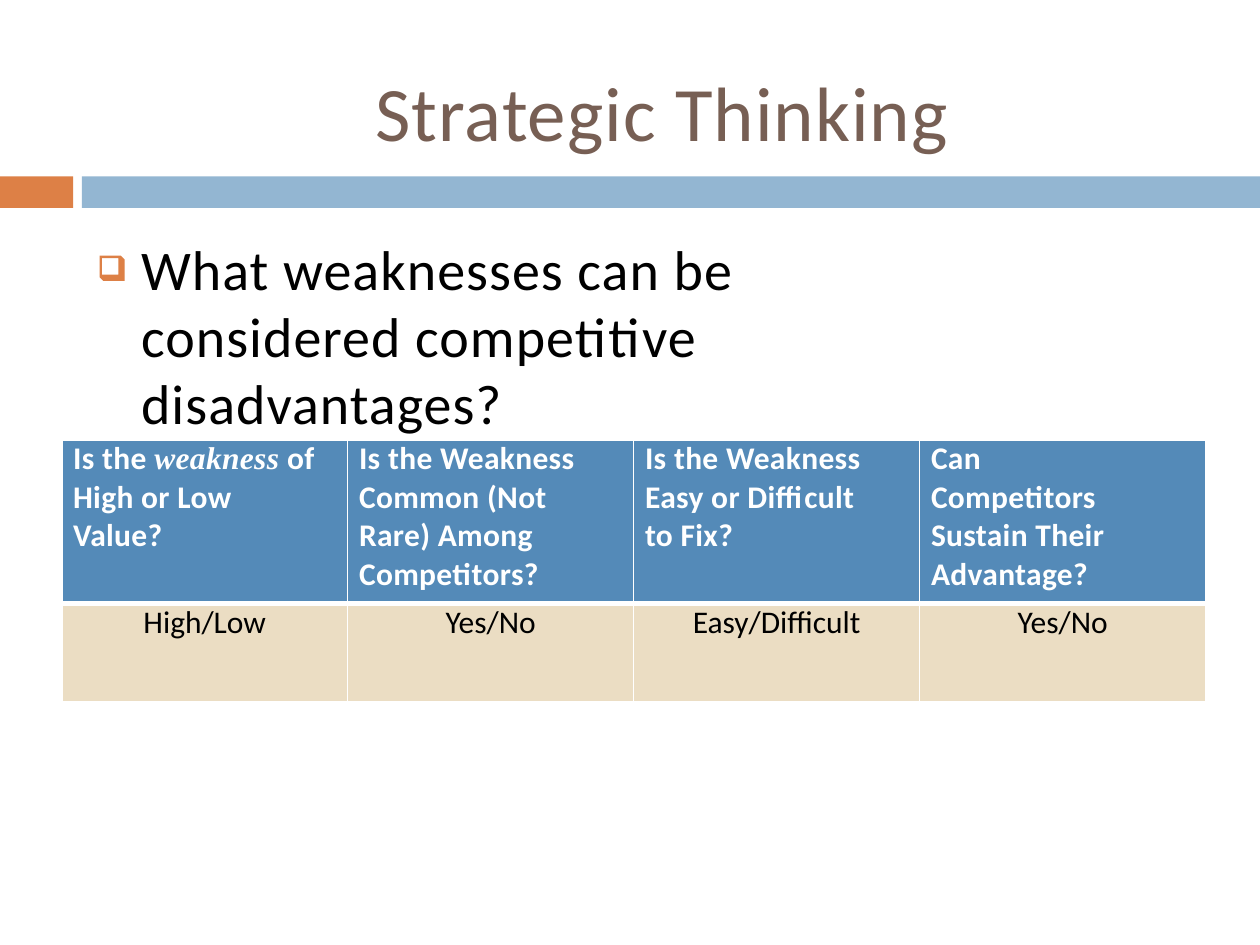
from lxml import etree
from pptx import Presentation
from pptx.dml.color import RGBColor
from pptx.enum.shapes import MSO_SHAPE
from pptx.enum.text import MSO_ANCHOR, MSO_AUTO_SIZE, PP_ALIGN
from pptx.oxml.ns import qn
from pptx.util import Inches, Pt

RECTANGLE = MSO_SHAPE.RECTANGLE
TOP = MSO_ANCHOR.TOP
NO_AUTOFIT = MSO_AUTO_SIZE.NONE
LEFT, CENTER = PP_ALIGN.LEFT, PP_ALIGN.CENTER

COLORS = {
    "orange": "DD8046", "blue": "93B6D2", "header": "548AB8",
    "sand": "EBDDC3", "brown": "775F54", "black": "000000", "white": "FFFFFF",
}
SANS, SERIF = "Calibri", "Times New Roman"

# Each header is a list of paragraphs, each paragraph a list of (text, is_emphasis);
# the last number is the right margin of the cell.
HEADERS = [
    ([[("Is the ", False), ("weakness", True), (" of High or Low Value?", False)]], 0.18),
    ([[("Is the Weakness Common (Not Rare) Among Competitors?", False)]], 0.2),
    ([[("Is the Weakness Easy or Difficult to Fix?", False)]], 0.35),
    ([[("Can Competitors Sustain Their", False)], [("Advantage?", False)]], 0.5),
]
ANSWERS = ["High/Low", "Yes/No", "Easy/Difficult", "Yes/No"]


def color(name):
    return RGBColor.from_string(COLORS[name])


def add_span(para, text, size, color_name, spacing=0, font=SANS, bold=False, italic=False):
    span = para.add_run()
    span.text = text
    span.font.name, span.font.size = font, Pt(size)
    span.font.bold, span.font.italic = bold, italic
    span.font.color.rgb = color(color_name)
    if spacing:
        span._r.get_or_add_rPr().set("spc", str(round(spacing * 100)))


def paint(shape, color_name):
    shape.shadow.inherit = False
    shape.fill.solid()
    shape.fill.fore_color.rgb = color(color_name)
    shape.line.fill.background()


def fill_placeholder(holder, box, text, size, color_name, inset_left=0, inset_top=0):
    holder.left, holder.top, holder.width, holder.height = map(Inches, box)
    frame = holder.text_frame
    frame.word_wrap, frame.auto_size = True, NO_AUTOFIT
    frame.vertical_anchor = TOP
    frame.margin_left, frame.margin_top = Inches(inset_left), Inches(inset_top)
    frame.margin_right = frame.margin_bottom = 0
    para = frame.paragraphs[0]
    para.alignment, para.space_before = LEFT, Pt(0)
    add_span(para, text, size, color_name, spacing=0.6)
    return para


def add_band(page, top, height):
    for left, width, name in ((0, 0.58, "orange"), (0.65, 9.35, "blue")):
        bar = page.shapes.add_shape(
            RECTANGLE, Inches(left), Inches(top), Inches(width), Inches(height))
        paint(bar, name)


def add_question(page, box):
    para = fill_placeholder(page.placeholders[1], box,
                            "What weaknesses can be considered competitive disadvantages?",
                            32, "black", inset_left=0.01)
    properties = para._p.get_or_add_pPr()
    properties.set("marL", "0")
    properties.set("indent", "0")
    etree.SubElement(properties, qn("a:buNone"))


def add_checkbox(page, left, top):
    """Square frame with a thick lower right edge."""
    def points(pairs):
        return [(Inches(left + x), Inches(top + y)) for x, y in pairs]

    # Outer outline with its shaded edge, then the open inside
    outer = points([(0, 0), (0.17, 0), (0.2, 0.03), (0.2, 0.2), (0.03, 0.2), (0, 0.17)])
    inner = points([(0.02, 0.02), (0.02, 0.15), (0.15, 0.15), (0.15, 0.02)])
    builder = page.shapes.build_freeform(*outer[0])
    builder.add_line_segments(outer[1:], close=True)
    builder.move_to(*inner[0])
    builder.add_line_segments(inner[1:], close=True)
    paint(builder.convert_to_shape(), "orange")


def style_cell(cell, fill_name, widths):
    """Give the cell white borders and a fill; widths are in points."""
    properties = cell._tc.get_or_add_tcPr()
    for side, width in zip(("L", "R", "T", "B"), widths):
        line = etree.SubElement(properties, qn(f"a:ln{side}"), w=str(Pt(width)))
        solid = etree.SubElement(line, qn("a:solidFill"))
        etree.SubElement(solid, qn("a:srgbClr"), val=COLORS["white"])
    cell.fill.solid()
    cell.fill.fore_color.rgb = color(fill_name)
    cell.margin_left = cell.margin_right = cell.margin_top = cell.margin_bottom = 0


def add_weakness_table(page, box, row_heights):
    table = page.shapes.add_table(2, len(HEADERS), *map(Inches, box)).table
    for row, height in zip(table.rows, row_heights):
        row.height = Inches(height)
    for index, ((paragraphs, right), answer) in enumerate(zip(HEADERS, ANSWERS)):
        table.columns[index].width = Inches(box[2] / len(HEADERS))

        # Question
        header = table.cell(0, index)
        style_cell(header, "header", (1, 1, 1, 3))
        header.margin_left, header.margin_right = Inches(0.09), Inches(right)
        frame = header.text_frame
        for number, spans in enumerate(paragraphs):
            para = frame.add_paragraph() if number else frame.paragraphs[0]
            for text, emphasis in spans:
                add_span(para, text, 18, "white", spacing=0.2, bold=True,
                         font=SERIF if emphasis else SANS, italic=emphasis)

        # Possible answers
        cell = table.cell(1, index)
        style_cell(cell, "sand", (1, 1, 3, 1))
        para = cell.text_frame.paragraphs[0]
        para.alignment = CENTER
        add_span(para, answer, 18, "black")


def main():
    deck = Presentation()
    deck.slide_width, deck.slide_height = Inches(10), Inches(7.5)
    page = deck.slides.add_slide(deck.slide_layouts[1])
    add_band(page, 1.4, 0.25)
    fill_placeholder(page.shapes.title, (0.76, 0.2, 8.49, 1.25), "Strategic Thinking",
                     44, "brown", inset_left=2.22, inset_top=0.31)
    add_checkbox(page, 0.79, 2.03)
    add_question(page, (1.11, 1.86, 6.56, 1.6))
    add_weakness_table(page, (0.49, 3.49, 9.08, 2.08), (1.3, 0.78))
    deck.save("out.pptx")


if __name__ == "__main__":
    main()
